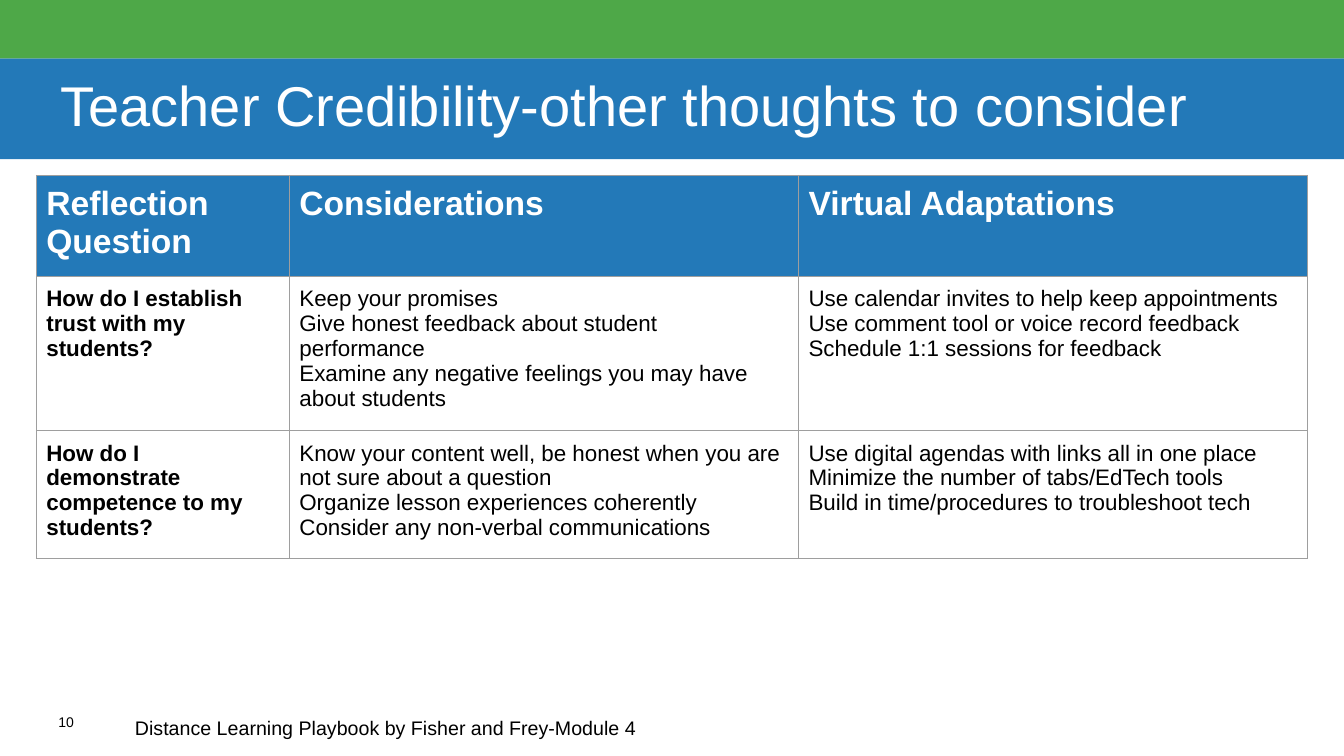
from lxml.etree import SubElement
from pptx import Presentation
from pptx.dml.color import RGBColor
from pptx.enum.shapes import MSO_SHAPE
from pptx.enum.text import MSO_ANCHOR, MSO_AUTO_SIZE, PP_ALIGN
from pptx.oxml.ns import qn
from pptx.util import Inches, Pt

GREEN, BLUE, GREY = "4EA848", "2379B8", "9E9E9E"
WHITE, BLACK = "FFFFFF", "000000"

HEADINGS = ["Reflection Question", "Considerations", "Virtual Adaptations"]
QUESTIONS = [
    [
        ["How do I establish trust with my students?"],
        [
            "Keep your promises",
            "Give honest feedback about student performance",
            "Examine any negative feelings you may have about students",
        ],
        [
            "Use calendar invites to help keep appointments",
            "Use comment tool or voice record feedback",
            "Schedule 1:1 sessions for feedback",
        ],
    ],
    [
        ["How do I demonstrate competence to my students?"],
        [
            "Know your content well, be honest when you are not sure about a question",
            "Organize lesson experiences coherently",
            "Consider any non-verbal communications",
        ],
        [
            "Use digital agendas with links all in one place",
            "Minimize the number of tabs/EdTech tools",
            "Build in time/procedures to troubleshoot tech",
        ],
    ],
]


def color(value):
    """Turn a hex string into a colour."""
    return RGBColor.from_string(value)


class SlideBuilder:
    """Hold the text style and the slide, and add elements to it."""

    font_name = "Arial"

    def __init__(self, slide):
        """Keep the slide to build on."""
        self.slide = slide

    def fill_text(self, frame, lines, size, font_color, bold=False):
        """Fill a text frame with styled paragraphs."""
        frame.word_wrap = True
        frame.text = "\n".join(lines)
        for paragraph in frame.paragraphs:
            paragraph.alignment = PP_ALIGN.LEFT
            font = paragraph.font
            font.name, font.size, font.bold = self.font_name, Pt(size), bold
            font.color.rgb = color(font_color)

    def set_margins(self, holder, horizontal, vertical):
        """Set the inner margins of a text frame or a cell."""
        holder.margin_left = holder.margin_right = Inches(horizontal)
        holder.margin_top = holder.margin_bottom = Inches(vertical)

    def band(self, left, top, width, height, fill):
        """Add a plain filled rectangle."""
        shape = self.slide.shapes.add_shape(
            MSO_SHAPE.RECTANGLE, Inches(left), Inches(top), Inches(width), Inches(height))
        shape.shadow.inherit = False
        shape.fill.solid()
        shape.fill.fore_color.rgb = color(fill)
        shape.line.fill.background()

    def title(self, text, left, top, width, height):
        """Place and format the title placeholder."""
        title = self.slide.shapes.title
        title.left, title.top = Inches(left), Inches(top)
        title.width, title.height = Inches(width), Inches(height)
        title.fill.solid()
        title.fill.fore_color.rgb = color(BLUE)
        frame = title.text_frame
        self.fill_text(frame, [text], 40, WHITE)
        self.set_margins(frame, 0.6, 0)
        frame.auto_size = MSO_AUTO_SIZE.NONE
        frame.vertical_anchor = MSO_ANCHOR.MIDDLE
        frame.paragraphs[0].line_spacing = 0.9

    def text(self, text, left, top, width, height, size, inset):
        """Add a one-line text box."""
        box = self.slide.shapes.add_textbox(
            Inches(left), Inches(top), Inches(width), Inches(height))
        self.fill_text(box.text_frame, [text], size, BLACK)
        self.set_margins(box.text_frame, inset, inset)

    def border(self, cell):
        """Draw a thin grey line on all four sides of a cell."""
        properties = cell._tc.get_or_add_tcPr()
        for position, side in enumerate(("lnL", "lnR", "lnT", "lnB")):
            line = SubElement(properties, qn(f"a:{side}"), w=str(Pt(0.75)))
            fill = SubElement(line, qn("a:solidFill"))
            SubElement(fill, qn("a:srgbClr"), val=GREY)
            properties.insert(position, line)

    def cell(self, cell, lines, size, font_color, bold, fill=None):
        """Format one table cell."""
        self.fill_text(cell.text_frame, lines, size, font_color, bold)
        self.set_margins(cell, 0.1, 0.1)
        if fill:
            cell.fill.solid()
            cell.fill.fore_color.rgb = color(fill)
        else:
            cell.fill.background()
        self.border(cell)

    def table(self, left, top, widths, heights, headings, rows):
        """Add a table with a coloured heading row and bold first column."""
        table = self.slide.shapes.add_table(
            len(heights), len(widths), Inches(left), Inches(top),
            Inches(sum(widths)), Inches(sum(heights))).table
        table.first_row = table.horz_banding = False
        for column, width in zip(table.columns, widths):
            column.width = Inches(width)
        for row, height in zip(table.rows, heights):
            row.height = Inches(height)
        for column, heading in enumerate(headings):
            self.cell(table.cell(0, column), [heading], 24, WHITE, True, BLUE)
        for row, contents in enumerate(rows, 1):
            for column, lines in enumerate(contents):
                self.cell(table.cell(row, column), lines, 16, BLACK, column == 0)


def main():
    """Build and save the slide."""
    presentation = Presentation()
    presentation.slide_width, presentation.slide_height = Inches(13.33), Inches(7.5)
    slide = presentation.slides.add_slide(presentation.slide_layouts[5])
    builder = SlideBuilder(slide)
    builder.band(0, 0, 13.33, 0.58, GREEN)
    builder.title("Teacher Credibility-other thoughts to consider", 0, 0.58, 13.33, 1)
    builder.text("10", 0.58, 7.08, 0.42, 0.25, 10, 0)
    builder.table(0.36, 1.74, [2.51, 5.05, 5.05], [1, 1.44, 1.27], HEADINGS, QUESTIONS)
    builder.text("Distance Learning Playbook by Fisher and Frey-Module 4",
                 1.24, 7, 7.5, 0.44, 14, 0.1)
    presentation.save("out.pptx")


if __name__ == "__main__":
    main()
